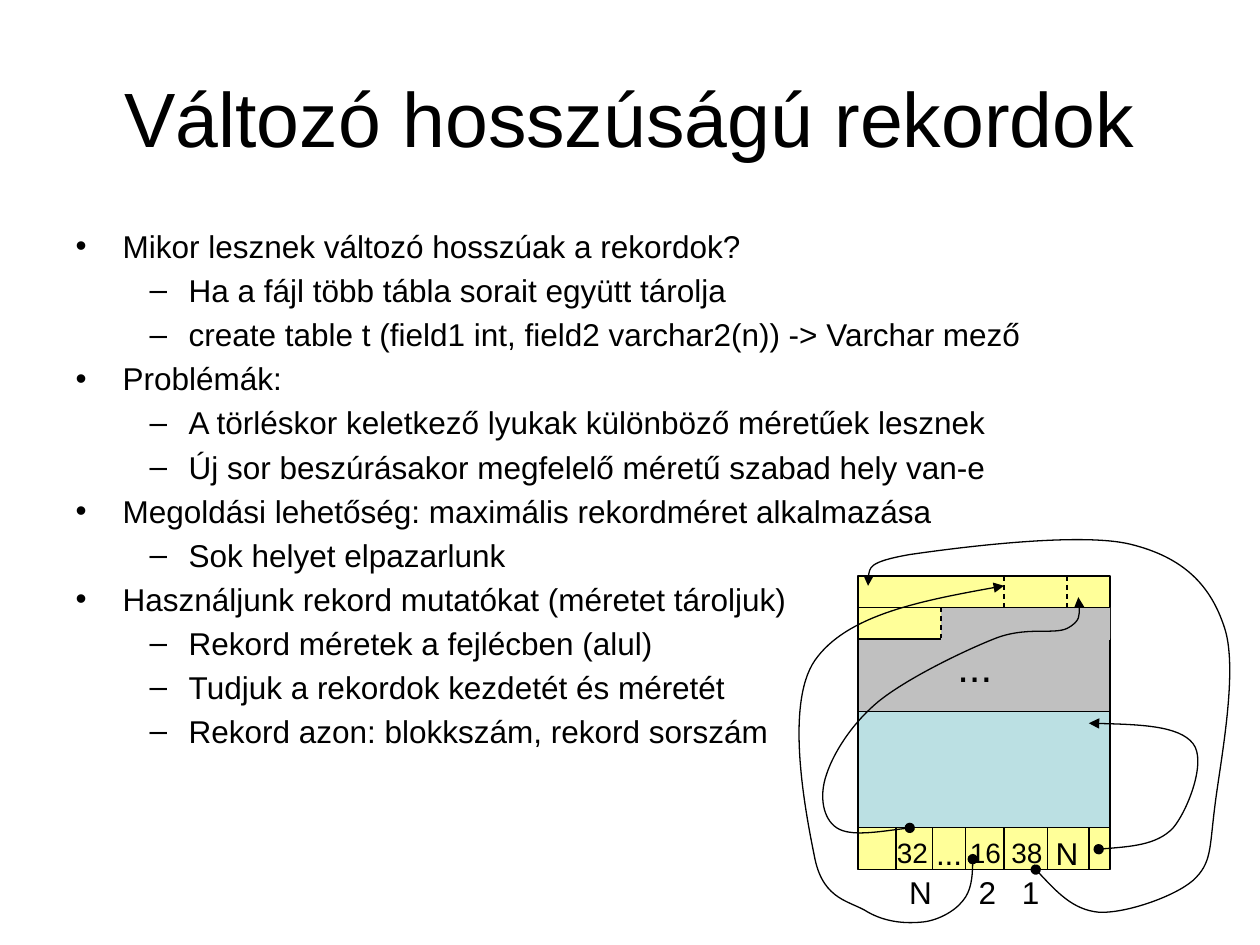
from typing import NamedTuple

from lxml.etree import SubElement
from pptx import Presentation
from pptx.dml.color import RGBColor
from pptx.enum.dml import MSO_LINE
from pptx.enum.shapes import MSO_CONNECTOR, MSO_SHAPE
from pptx.enum.text import MSO_ANCHOR, MSO_AUTO_SIZE, PP_ALIGN
from pptx.oxml.ns import qn
from pptx.util import Cm, Pt

BLACK = RGBColor(0x00, 0x00, 0x00)
YELLOW = RGBColor(0xFF, 0xFF, 0x99)
GRAY = RGBColor(0xC0, 0xC0, 0xC0)
TEAL = RGBColor(0xBB, 0xE0, 0xE3)
FONT = "Arial"

# Edges of the storage block, in centimetres
LEFT, RIGHT = 17.3, 22.38
TOP, ROW_1, ROW_2, FREE_TOP, HEADER_TOP, BOTTOM = 11.61, 12.24, 12.88, 14.35, 16.69, 17.53
RECORD_END = 18.97


class Band(NamedTuple):
    left: float
    top: float
    bottom: float
    color: RGBColor
    outlined: bool = True


class Rule(NamedTuple):
    x1: float
    y1: float
    x2: float
    y2: float
    dashed: bool = False
    color: RGBColor = BLACK


class Label(NamedTuple):
    text: str
    left: float
    top: float
    size: int = 18


BULLETS = [
    (0, "Mikor lesznek változó hosszúak a rekordok?"),
    (1, "Ha a fájl több tábla sorait együtt tárolja"),
    (1, "create table t (field1 int, field2 varchar2(n)) -> Varchar mező"),
    (0, "Problémák:"),
    (1, "A törléskor keletkező lyukak különböző méretűek lesznek"),
    (1, "Új sor beszúrásakor megfelelő méretű szabad hely van-e"),
    (0, "Megoldási lehetőség: maximális rekordméret alkalmazása"),
    (1, "Sok helyet elpazarlunk"),
    (0, "Használjunk rekord mutatókat (méretet tároljuk)"),
    (1, "Rekord méretek a fejlécben (alul)"),
    (1, "Tudjuk a rekordok kezdetét és méretét"),
    (1, "Rekord azon: blokkszám, rekord sorszám"),
]
INDENTS = [(Cm(0.95), Cm(-0.95)), (Cm(2.28), Cm(-0.79))]

BANDS = [
    Band(LEFT, TOP, BOTTOM, YELLOW),
    Band(RECORD_END, ROW_1, ROW_2, GRAY, outlined=False),
    Band(LEFT, ROW_2, FREE_TOP, GRAY),
    Band(LEFT, FREE_TOP, HEADER_TOP, TEAL),
]
RULES = [
    Rule(LEFT, ROW_1, RIGHT, ROW_1),
    *[Rule(x, HEADER_TOP, x, BOTTOM) for x in (18.06, 18.8, 19.46, 20.24, 21.11, 21.95)],
    *[Rule(x, TOP, x, ROW_1, dashed=True) for x in (20.24, 21.51)],
    Rule(RECORD_END, ROW_1, RECORD_END, ROW_2, dashed=True),
    Rule(RECORD_END, ROW_2, RIGHT, ROW_2, color=GRAY),
]
LABELS = [
    Label("...", 19.05, 12.78, 24),
    Label("32", 17.83, 16.71, 16),
    Label("...", 18.62, 16.69),
    Label("16", 19.3, 16.71, 16),
    Label("38", 20.14, 16.71, 16),
    Label("N", 21.03, 16.69),
    Label("N", 18.08, 17.48),
    Label("2", 19.48, 17.48),
    Label("1", 20.35, 17.48),
]

# Each pointer: a start, then two control points and an end for every segment
FREE_SPACE_POINTER = [
    (22.15, 17.12), (22.73, 17.07), (23.32, 17.04), (23.65, 16.69),
    (23.95, 16.33), (24.33, 15.34), (24.05, 14.99),
    (23.77, 14.63), (22.86, 14.6), (21.95, 14.58),
]
RECORD_1_POINTER = [
    (20.88, 17.53), (21.26, 17.93), (21.62, 18.34), (22.15, 18.39),
    (22.68, 18.42), (23.67, 18.08), (24.05, 17.75),
    (24.43, 17.4), (24.38, 17.12), (24.49, 16.26),
    (24.59, 15.42), (24.97, 13.54), (24.69, 12.67),
    (24.41, 11.79), (23.85, 11.23), (22.78, 10.97),
    (21.74, 10.72), (19.23, 11.05), (18.34, 11.18),
    (17.48, 11.33), (17.48, 11.58), (17.5, 11.81),
]
RECORD_2_POINTER = [
    (19.61, 17.32), (19.61, 17.63), (19.58, 17.96), (19.41, 18.16),
    (19.23, 18.39), (18.87, 18.57), (18.57, 18.59),
    (18.24, 18.62), (17.86, 18.59), (17.5, 18.39),
    (17.15, 18.16), (16.61, 18.16), (16.43, 17.32),
    (16.26, 16.48), (15.8, 14.22), (16.43, 13.31),
    (17.07, 12.4), (18.67, 12.09), (20.24, 11.81),
]
RECORD_N_POINTER = [
    (18.34, 16.69), (17.75, 16.76), (17.15, 16.87), (16.87, 16.69),
    (16.59, 16.51), (16.51, 16.05), (16.66, 15.62),
    (16.79, 15.21), (17.15, 14.61), (17.7, 14.15),
    (18.26, 13.69), (19.41, 13.13), (20.04, 12.88),
    (20.68, 12.62), (21.23, 12.8), (21.51, 12.67),
    (21.79, 12.52), (21.77, 12.27), (21.74, 12.04),
]
POINTERS = [FREE_SPACE_POINTER, RECORD_1_POINTER, RECORD_2_POINTER, RECORD_N_POINTER]


def format_para(para, size: int) -> None:
    for span in para.runs:
        span.font.name = FONT
        span.font.size = Pt(size)
        span.font.color.rgb = BLACK


def place(shape, left: float, top: float, width: float, height: float) -> None:
    shape.left, shape.top, shape.width, shape.height = map(Cm, (left, top, width, height))


def fill_title(title) -> None:
    place(title, 1.27, 0.76, 22.86, 3.18)
    frame = title.text_frame
    frame.text = "Változó hosszúságú rekordok"
    frame.auto_size = MSO_AUTO_SIZE.NONE
    frame.vertical_anchor = MSO_ANCHOR.MIDDLE
    frame.paragraphs[0].alignment = PP_ALIGN.CENTER
    format_para(frame.paragraphs[0], 44)


def fill_body(body) -> None:
    place(body, 1.27, 4.45, 22.86, 12.57)
    frame = body.text_frame
    frame.text = "\n".join(text for _, text in BULLETS)
    frame.auto_size = MSO_AUTO_SIZE.NONE
    for para, (level, _) in zip(frame.paragraphs, BULLETS):
        para.level = level
        margin, indent = INDENTS[level]
        properties = para._p.get_or_add_pPr()
        properties.set("marL", str(margin))
        properties.set("indent", str(indent))
        format_para(para, 18)


def style_line(line, color: RGBColor = BLACK) -> None:
    line.color.rgb = color
    line.width = Pt(0.75)


def draw_band(page, band: Band) -> None:
    box = page.shapes.add_shape(MSO_SHAPE.RECTANGLE, 0, 0, 0, 0)
    place(box, band.left, band.top, RIGHT - band.left, band.bottom - band.top)
    box.shadow.inherit = False
    box.fill.solid()
    box.fill.fore_color.rgb = band.color
    if band.outlined:
        style_line(box.line)
    else:
        box.line.fill.background()


def draw_rule(page, rule: Rule) -> None:
    ends = map(Cm, (rule.x1, rule.y1, rule.x2, rule.y2))
    connector = page.shapes.add_connector(MSO_CONNECTOR.STRAIGHT, *ends)
    style_line(connector.line, rule.color)
    if rule.dashed:
        connector.line.dash_style = MSO_LINE.DASH
    SubElement(connector._element.spPr, qn("a:effectLst"))


def draw_label(page, label: Label) -> None:
    box = page.shapes.add_textbox(Cm(label.left), Cm(label.top), Cm(1.85), Cm(1))
    box.text_frame.word_wrap = True
    box.text_frame.text = label.text
    format_para(box.text_frame.paragraphs[0], label.size)


def draw_pointer(page, points: list[tuple[float, float]]) -> None:
    """Draw a Bézier curve with a dot at its start and an arrowhead at its end."""
    start, *rest = [(Cm(x), Cm(y)) for x, y in points]
    builder = page.shapes.build_freeform(*start)
    builder.add_line_segments(rest, close=False)
    curve = builder.convert_to_shape()
    outline = next(curve._element.iter(qn("a:path")))
    segments = outline.findall(qn("a:lnTo"))
    for first in range(0, len(segments), 3):
        bezier = SubElement(outline, qn("a:cubicBezTo"))
        for segment in segments[first:first + 3]:
            bezier.append(segment[0])
            outline.remove(segment)
    curve.shadow.inherit = False
    curve.fill.background()
    style_line(curve.line)
    line = curve.line._get_or_add_ln()
    SubElement(line, qn("a:headEnd"), type="oval")
    SubElement(line, qn("a:tailEnd"), type="triangle")


def main() -> None:
    deck = Presentation()
    deck.slide_width, deck.slide_height = Cm(25.4), Cm(19.05)
    page = deck.slides.add_slide(deck.slide_layouts[1])
    fill_title(page.shapes.title)
    fill_body(page.placeholders[1])
    for draw, items in ((draw_band, BANDS), (draw_rule, RULES),
                        (draw_label, LABELS), (draw_pointer, POINTERS)):
        for item in items:
            draw(page, item)
    deck.save("out.pptx")


if __name__ == "__main__":
    main()
